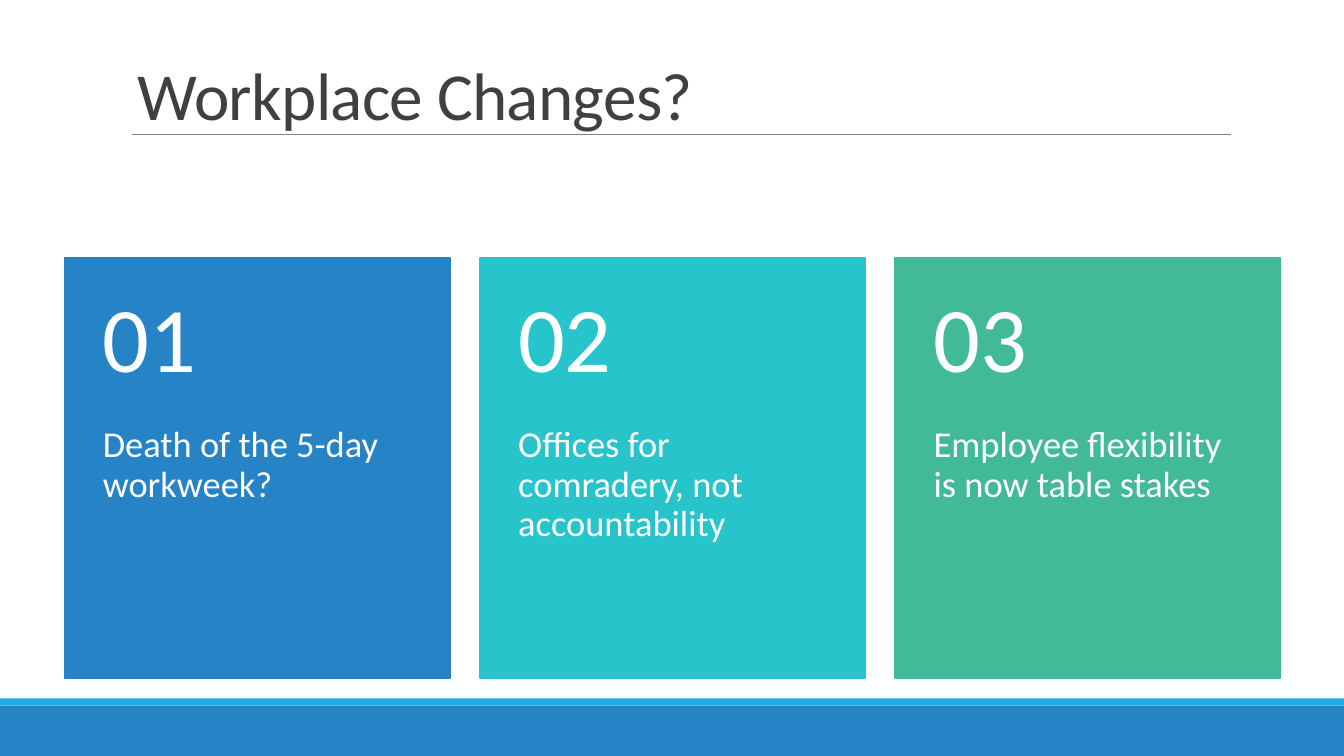
import dataclasses
import typing

import pptx
import pptx.dml.color
import pptx.enum.shapes
import pptx.enum.text
import pptx.oxml.ns
import pptx.util
from lxml import etree

Inches = pptx.util.Inches
Pt = pptx.util.Pt
RGB = pptx.dml.color.RGBColor.from_string
Anchor = pptx.enum.text.MSO_ANCHOR


@dataclasses.dataclass(frozen=True)
class Theme:
    font: str = "Calibri"
    blue: str = "2683C6"
    sky: str = "1CADE4"
    teal: str = "28C4CC"
    green: str = "42BA97"
    rule: str = "808080"
    heading: str = "404040"
    white: str = "FFFFFF"
    title_size: float = 48
    number_size: float = 66
    body_size: float = 26
    title_tracking: float = -0.5
    rule_width: float = 0.5
    card_line: float = 1.25


@dataclasses.dataclass(frozen=True)
class Box:
    left: float
    top: float
    width: float
    height: float

    def lengths(self) -> list[int]:
        return [Inches(v) for v in (self.left, self.top, self.width, self.height)]


@dataclasses.dataclass(frozen=True)
class TextStyle:
    size: float
    color: str
    line_spacing: float
    anchor: Anchor
    insets: tuple[float, float, float, float]  # left, top, right, bottom
    tracking: float = 0


@dataclasses.dataclass(frozen=True)
class Card:
    message: str
    color: str


THEME = Theme()
TITLE = TextStyle(THEME.title_size, THEME.heading, 0.85, Anchor.BOTTOM,
                  (0.1, 0.05, 0.1, 0.05), THEME.title_tracking)
NUMBER = TextStyle(THEME.number_size, THEME.white, 0.9, Anchor.MIDDLE,
                   (0.38, 0.18, 0.38, 0.18))
MESSAGE = TextStyle(THEME.body_size, THEME.white, 0.9, Anchor.TOP,
                    (0.38, 0, 0.38, 0.36))

SLIDE_WIDTH, SLIDE_HEIGHT = 13.33, 7.5
FIRST_CARD = Box(0.64, 2.56, 3.82, 4.17)
CARD_STEP = 4.12
NUMBER_HEIGHT = 1.67
CARDS = [
    Card("Death of the 5-day workweek?", THEME.blue),
    Card("Offices for comradery, not accountability", THEME.teal),
    Card("Employee flexibility is now table stakes", THEME.green),
]


def apply_format(target: typing.Any, values: dict[str, typing.Any]) -> None:
    for name, value in values.items():
        setattr(target, name, value)


def add_block(slide: typing.Any, box: Box, color: str, line_width: float = 0) -> None:
    block = slide.shapes.add_shape(pptx.enum.shapes.MSO_SHAPE.RECTANGLE, *box.lengths())
    block.shadow.inherit = False
    block.fill.solid()
    block.fill.fore_color.rgb = RGB(color)
    if line_width:
        block.line.color.rgb = RGB(color)
        block.line.width = Pt(line_width)
    else:
        block.line.fill.background()


def add_text(slide: typing.Any, box: Box, words: str, style: TextStyle) -> None:
    frame = slide.shapes.add_textbox(*box.lengths()).text_frame
    left, top, right, bottom = (Inches(v) for v in style.insets)
    apply_format(frame, {
        "word_wrap": True, "vertical_anchor": style.anchor,
        "margin_left": left, "margin_top": top,
        "margin_right": right, "margin_bottom": bottom,
    })
    paragraph = frame.paragraphs[0]
    paragraph.line_spacing = style.line_spacing
    run = paragraph.add_run()
    run.text = words
    apply_format(run.font, {"name": THEME.font, "size": Pt(style.size)})
    run.font.color.rgb = RGB(style.color)
    if style.tracking:
        run._r.get_or_add_rPr().set("spc", str(round(style.tracking * 100)))


def add_rule(slide: typing.Any, left: float, right: float, y: float) -> None:
    rule = slide.shapes.add_connector(
        pptx.enum.shapes.MSO_CONNECTOR.STRAIGHT,
        Inches(left), Inches(y), Inches(right), Inches(y))
    rule.line.color.rgb = RGB(THEME.rule)
    rule.line.width = Pt(THEME.rule_width)
    etree.SubElement(rule._element.spPr, pptx.oxml.ns.qn("a:effectLst"))


def add_card(slide: typing.Any, index: int, card: Card) -> None:
    box = dataclasses.replace(FIRST_CARD, left=FIRST_CARD.left + index * CARD_STEP)
    number_box = dataclasses.replace(box, height=NUMBER_HEIGHT)
    message_box = dataclasses.replace(
        box, top=box.top + NUMBER_HEIGHT, height=box.height - NUMBER_HEIGHT)
    add_block(slide, box, card.color, THEME.card_line)
    add_text(slide, message_box, card.message, MESSAGE)
    add_text(slide, number_box, f"{index + 1:02d}", NUMBER)


def main() -> None:
    deck = pptx.Presentation()
    apply_format(deck, {"slide_width": Inches(SLIDE_WIDTH),
                        "slide_height": Inches(SLIDE_HEIGHT)})
    slide = deck.slides.add_slide(deck.slide_layouts[6])

    # Footer bands
    add_block(slide, Box(0, 7, SLIDE_WIDTH, 0.5), THEME.blue)
    add_block(slide, Box(0, 6.93, SLIDE_WIDTH, 0.07), THEME.sky)

    # Title and its underline
    add_rule(slide, 1.31, 12.21, 1.33)
    add_text(slide, Box(1.27, 0.08, 12.06, 1.3), "Workplace Changes?", TITLE)

    # Numbered cards
    for index, card in enumerate(CARDS):
        add_card(slide, index, card)

    deck.save("out.pptx")


if __name__ == "__main__":
    main()
